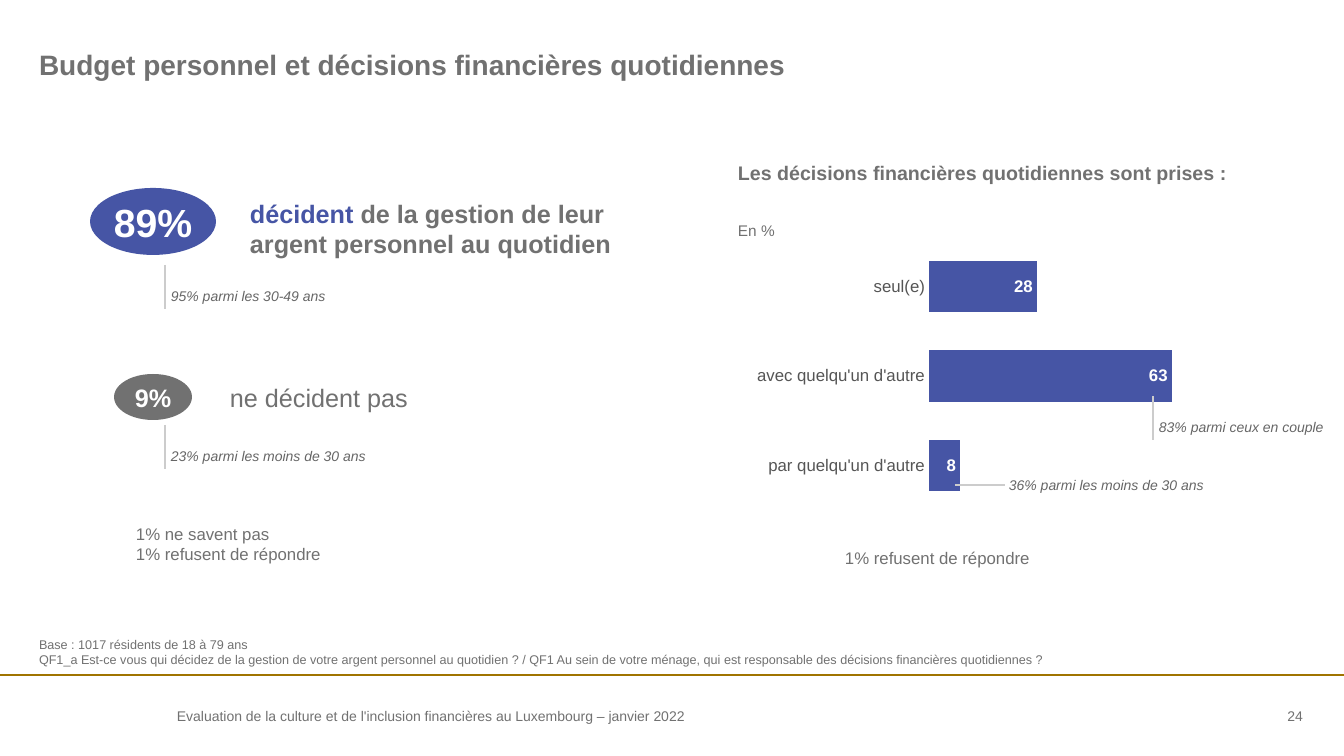
"""Build the slide on personal budgets and daily financial decisions."""
from dataclasses import dataclass

from lxml import etree
from pptx import Presentation
from pptx import util as u
from pptx.chart.data import CategoryChartData
from pptx.dml.color import RGBColor
from pptx.enum import chart as ch, shapes, text
from pptx.oxml import parse_xml
from pptx.oxml.ns import nsdecls, qn

PX = 914400 / 100.8


@dataclass(frozen=True)
class Theme:
    """Colours, font and type sizes of the slide."""
    font: str = "Arial"
    blue: str = "4655A5"
    grey: str = "717171"
    note: str = "666666"
    axis: str = "555555"
    rule: str = "CCCCCC"
    gold: str = "A07400"
    white: str = "FFFFFF"
    hero: int = 28
    title: int = 20
    lead: int = 18
    heading: int = 14
    body: int = 12
    unit: int = 11
    small: int = 10
    base: int = 9


T = Theme()


def px(*values):
    """Turn pixels into EMU lengths."""
    return [u.Emu(round(v * PX)) for v in values]


def style(font, size, color=T.grey, bold=False, italic=False):
    """Set the look of a font."""
    font.name, font.size = T.font, u.Pt(size)
    font.bold, font.italic = bold, italic
    font.color.rgb = RGBColor.from_string(color)


def set_insets(tf, left, top, right, bottom):
    """Set the four margins of a text frame."""
    tf.margin_left, tf.margin_top, tf.margin_right, tf.margin_bottom = px(left, top, right, bottom)


def add_text(s, box, lines, size, color=T.grey, bold=False, italic=False,
             inset=0, anchor=text.MSO_ANCHOR.TOP, align=None):
    """Add a wrapped text box with one paragraph for each line."""
    tf = s.shapes.add_textbox(*px(*box)).text_frame
    tf.word_wrap, tf.vertical_anchor = True, anchor
    set_insets(tf, inset, inset, inset, inset)
    tf.text = lines
    for p in tf.paragraphs:
        p.alignment = align
        for r in p.runs:
            style(r.font, size, color, bold, italic)
    return tf


def add_line(s, ends, color=T.rule, width=1):
    """Add a straight line without shadow."""
    line = s.shapes.add_connector(shapes.MSO_CONNECTOR.STRAIGHT, *px(*ends))
    line.line.color.rgb = RGBColor.from_string(color)
    line.line.width = u.Pt(width)
    etree.SubElement(line._element.spPr, qn("a:effectLst"))


def add_badge(s, box, label, size, fill):
    """Add an ellipse that holds a percentage."""
    sp = s.shapes.add_shape(shapes.MSO_SHAPE.OVAL, *px(*box))
    sp.shadow.inherit = False
    sp.fill.solid()
    sp.fill.fore_color.rgb = RGBColor.from_string(fill)
    sp.line.fill.background()
    tf = sp.text_frame
    set_insets(tf, 4, 4, 4, 4)
    tf.vertical_anchor = text.MSO_ANCHOR.MIDDLE
    tf.text = label
    tf.paragraphs[0].alignment = text.PP_ALIGN.CENTER
    style(tf.paragraphs[0].runs[0].font, size, T.white, bold=True)


def add_note(s, box, label, ends):
    """Add an italic subgroup note with its leader line."""
    add_line(s, ends)
    add_text(s, box, label, T.small, T.note, italic=True, inset=4)


def add_bars(s, box, values):
    """Add the horizontal bar chart."""
    data = CategoryChartData()
    data.categories = list(values)
    data.add_series("Series 1", list(values.values()))
    chart = s.shapes.add_chart(ch.XL_CHART_TYPE.BAR_CLUSTERED, *px(*box), data).chart
    chart.has_legend = chart.has_title = False
    style(chart.font, T.small)

    cat, val = chart.category_axis, chart.value_axis
    cat.reverse_order = True
    cat.major_tick_mark = cat.minor_tick_mark = ch.XL_TICK_MARK.NONE
    cat.format.line.fill.background()
    style(cat.tick_labels.font, T.body, T.axis)
    val.minimum_scale, val.maximum_scale = 0, 70
    val.has_major_gridlines = val.visible = False

    plot = chart.plots[0]
    plot.gap_width, plot.vary_by_categories = 75, False
    bars = plot.series[0]
    bars.format.fill.solid()
    bars.format.fill.fore_color.rgb = RGBColor.from_string(T.blue)
    labels = bars.data_labels
    labels.show_value = True
    labels.position = ch.XL_LABEL_POSITION.INSIDE_END
    style(labels.font, T.body, T.white, bold=True)

    area = chart._chartSpace.chart.plotArea
    for old in area.findall(qn("c:layout")):
        area.remove(old)
    frame = {"x": 0.475, "y": 0.04, "w": 0.502, "h": 0.921}
    sizes = "".join(f'<c:{k} val="{v}"/>' for k, v in frame.items())
    area.insert(0, parse_xml(
        f'<c:layout {nsdecls("c")}><c:manualLayout><c:layoutTarget val="inner"/>'
        f'<c:xMode val="edge"/><c:yMode val="edge"/>{sizes}</c:manualLayout></c:layout>'))


def add_frame(s):
    """Add the title, base note and footer."""
    middle = text.MSO_ANCHOR.MIDDLE
    add_text(s, (39, 47, 1264, 44), "Budget personnel et décisions financières quotidiennes",
             T.title, bold=True)
    add_text(s, (39, 637, 1264, 30),
             "Base : 1017 résidents de 18 à 79 ans\n"
             "QF1_a Est-ce vous qui décidez de la gestion de votre argent personnel au quotidien ? / "
             "QF1 Au sein de votre ménage, qui est responsable des décisions financières quotidiennes ?",
             T.base, anchor=text.MSO_ANCHOR.BOTTOM)
    add_line(s, (0, 675, 1344, 675), T.gold, 1.5)
    add_text(s, (177, 705, 539, 22),
             "Evaluation de la culture et de l'inclusion financières au Luxembourg – janvier 2022",
             T.small, anchor=middle)
    add_text(s, (1196, 705, 107, 22), "24", T.small, anchor=middle, align=text.PP_ALIGN.RIGHT)


def add_shares(s):
    """Add the left side: who decides and who does not."""
    add_badge(s, (90, 188, 126, 67), "89%", T.hero, T.blue)
    tf = add_text(s, (250, 198, 382, 61), "décident", T.lead, T.blue, bold=True)
    r = tf.paragraphs[0].add_run()
    r.text = " de la gestion de leur argent personnel au quotidien"
    style(r.font, T.lead, bold=True)
    add_badge(s, (114, 374, 78, 46), "9%", T.lead, T.grey)
    add_text(s, (230, 382, 382, 30), "ne décident pas", T.lead)
    for top, label in ((265, "95% parmi les 30-49 ans"), (425, "23% parmi les moins de 30 ans")):
        add_note(s, (167, top + 19, 234, 25), label, (165, top, 165, top + 44))
    add_text(s, (136, 524, 382, 40), "1% ne savent pas\n1% refusent de répondre", T.body)


def add_decisions(s):
    """Add the right side: how daily decisions are made."""
    add_text(s, (738, 161, 547, 24), "Les décisions financières quotidiennes sont prises :",
             T.heading, bold=True)
    add_bars(s, (674, 230, 537, 292),
             {"seul(e)": 28, "avec quelqu'un d'autre": 63, "par quelqu'un d'autre": 8})
    add_text(s, (738, 221, 50, 19), "En %", T.unit)
    add_note(s, (1155, 415, 184, 25), "83% parmi ceux en couple", (1153, 396, 1153, 440))
    add_note(s, (1005, 473, 207, 25), "36% parmi les moins de 30 ans", (955, 485, 1005, 485))
    add_text(s, (845, 548, 382, 20), "1% refusent de répondre", T.body)


def main():
    """Build and save the slide."""
    prs = Presentation()
    prs.slide_width, prs.slide_height = px(1344, 756)
    s = prs.slides.add_slide(prs.slide_layouts[6])
    add_frame(s)
    add_shares(s)
    add_decisions(s)
    prs.save("out.pptx")


if __name__ == "__main__":
    main()
